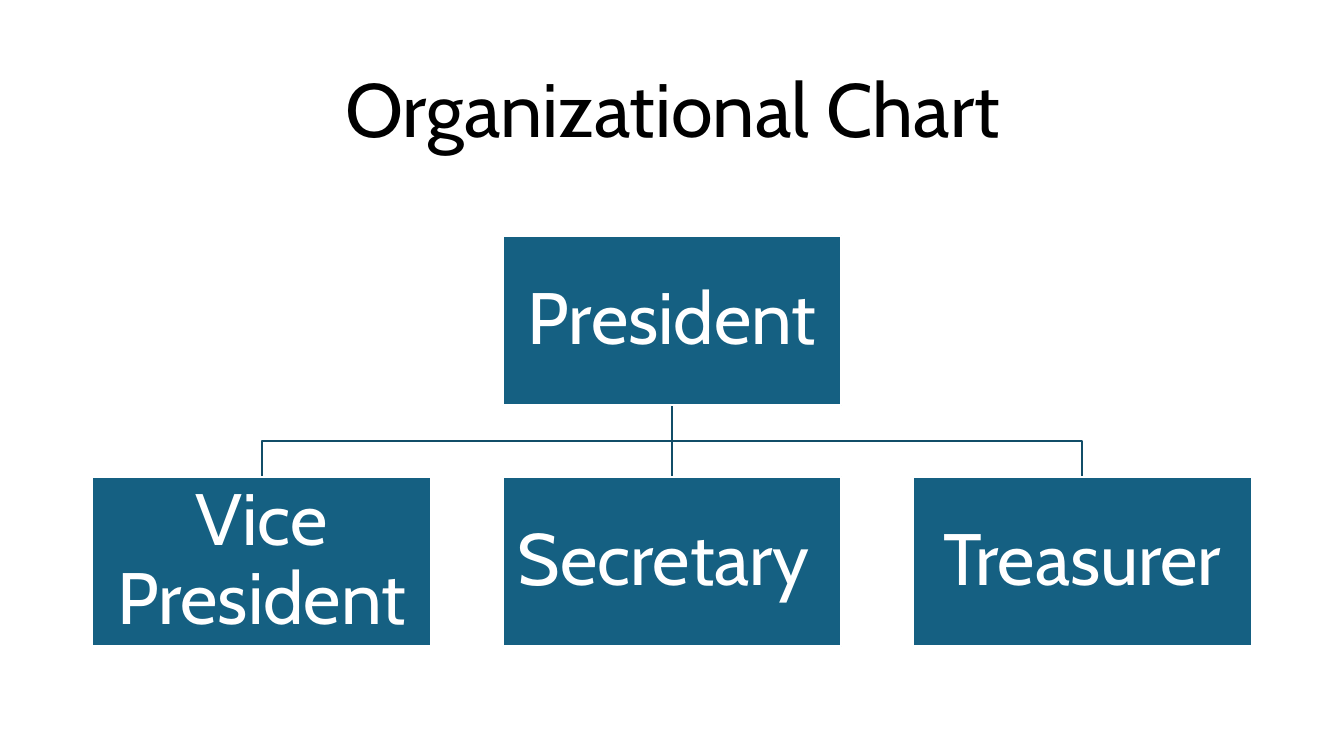
from lxml import etree
from pptx import Presentation
from pptx.dml.color import RGBColor
from pptx.enum.shapes import MSO_CONNECTOR, MSO_SHAPE
from pptx.enum.text import MSO_ANCHOR, PP_ALIGN
from pptx.oxml.ns import qn
from pptx.util import Inches, Pt

RECTANGLE = MSO_SHAPE.RECTANGLE
STRAIGHT = MSO_CONNECTOR.STRAIGHT
MIDDLE = MSO_ANCHOR.MIDDLE
CENTER = PP_ALIGN.CENTER
BLACK = RGBColor(0x00, 0x00, 0x00)
WHITE = RGBColor(0xFF, 0xFF, 0xFF)
BLUE = RGBColor(0x15, 0x60, 0x82)
DARK_BLUE = RGBColor(0x11, 0x4D, 0x68)

SLIDE_WIDTH, SLIDE_HEIGHT = Inches(13.33), Inches(7.5)
BOX_WIDTH, BOX_HEIGHT, GAP = Inches(3.36), Inches(1.68), Inches(0.71)
GRID_LEFT = (SLIDE_WIDTH - 3 * BOX_WIDTH - 2 * GAP) // 2
GRID_TOP = Inches(2.34)
INSET = Inches(0.04)
LINE_WIDTH = Pt(1.5)
OFFICERS = ["Vice President", "Secretary ", "Treasurer"]


class OrgChart:
    """Draws organizational chart elements on one slide in a shared style."""

    def __init__(self, page):
        self.page = page
        self.font = {"name": "Cabin", "bold": False}

    def label(self, shape, text, size, color, frame_format):
        frame = shape.text_frame
        frame_format = {"word_wrap": True, "vertical_anchor": MIDDLE, **frame_format}
        for name, value in frame_format.items():
            setattr(frame, name, value)
        para = frame.paragraphs[0]
        for name, value in {"alignment": CENTER, "line_spacing": 0.9}.items():
            setattr(para, name, value)
        span = para.add_run()
        span.text = text
        for name, value in {**self.font, "size": Pt(size)}.items():
            setattr(span.font, name, value)
        span.font.color.rgb = color

    def stroke(self, shape, color):
        shape.line.color.rgb = color
        shape.line.width = LINE_WIDTH

    def title(self, text):
        box = self.page.shapes.add_textbox(
            Inches(0.92), Inches(0.4), Inches(11.5), Inches(1.45))
        self.label(box, text, 54, BLACK, {})

    def role(self, text, column, row):
        box = self.page.shapes.add_shape(
            RECTANGLE,
            GRID_LEFT + column * (BOX_WIDTH + GAP),
            GRID_TOP + row * (BOX_HEIGHT + GAP),
            BOX_WIDTH, BOX_HEIGHT)
        box.shadow.inherit = False
        box.fill.solid()
        box.fill.fore_color.rgb = BLUE
        self.stroke(box, WHITE)
        sides = ("left", "top", "right", "bottom")
        self.label(box, text, 52, WHITE, {f"margin_{side}": INSET for side in sides})
        return box

    def branch(self, upper, lower):
        start, end = (box.left + box.width // 2 for box in (upper, lower))
        if start == end:
            line = self.page.shapes.add_connector(STRAIGHT, 0, 0, 0, 0)
            line.begin_connect(upper, 2)
            line.end_connect(lower, 0)
            etree.SubElement(line.element.spPr, qn("a:effectLst"))
        else:
            top = upper.top + upper.height
            bend = (top + lower.top) // 2
            builder = self.page.shapes.build_freeform(start, top)
            builder.add_line_segments(
                [(start, bend), (end, bend), (end, lower.top)], close=False)
            line = builder.convert_to_shape()
            line.shadow.inherit = False
            line.fill.background()
        self.stroke(line, DARK_BLUE)
        upper.element.addprevious(line.element)


def main():
    deck = Presentation()
    deck.slide_width, deck.slide_height = SLIDE_WIDTH, SLIDE_HEIGHT
    chart = OrgChart(deck.slides.add_slide(deck.slide_layouts[6]))
    chart.title("Organizational Chart")
    president = chart.role("President", 1, 0)
    for column, officer in enumerate(OFFICERS):
        chart.branch(president, chart.role(officer, column, 1))
    deck.save("out.pptx")


if __name__ == "__main__":
    main()
